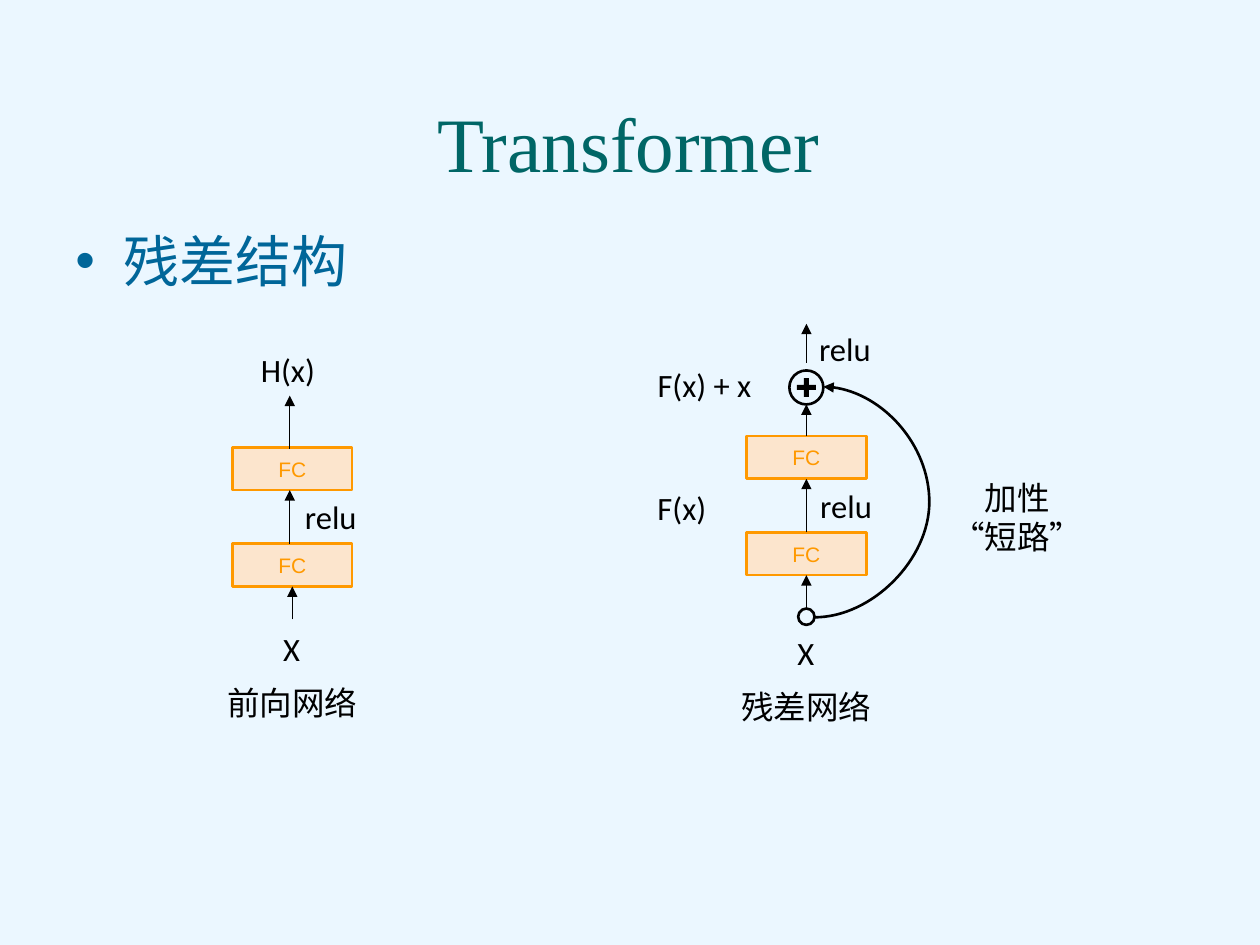
from dataclasses import dataclass

from lxml.etree import SubElement
from pptx import Presentation
from pptx.dml.color import RGBColor
from pptx.enum.shapes import MSO_CONNECTOR as Link, MSO_SHAPE as Shape
from pptx.enum.text import MSO_ANCHOR as Anchor, PP_ALIGN as Align
from pptx.oxml.ns import qn
from pptx.util import Inches, Pt

COLORS = {
    "page": "EBF7FF", "title": "006666", "topic": "006699",
    "ink": "000000", "layer": "FCE5CD", "accent": "FF9900",
}
UNIT = Inches(0.1)  # the page is a grid of 100 columns by 75 rows
LAYER_WIDTH, LAYER_HEIGHT, LAYER_STEP = 9.5, 3.4, 7.65


@dataclass
class Box:
    """A region of the page, in grid columns and rows."""
    left: float
    top: float
    width: float
    height: float

    def inner(self, left, top, width, height):
        return Box(self.left + left, self.top + top, width, height)

    def point(self, column, row):
        return self.left + column, self.top + row

    def lengths(self):
        return [grid(value) for value in (self.left, self.top, self.width, self.height)]


def grid(value):
    return round(value * UNIT)


def color(name):
    return RGBColor.from_string(COLORS[name])


def write(para, text, size, font, ink, align=None):
    para.alignment = align
    span = para.add_run()
    span.text = text
    span.font.size, span.font.name = Pt(size), font
    span.font.color.rgb = color(ink)


def set_frame(frame, anchor, inset=0.1):
    frame.word_wrap = True
    frame.vertical_anchor = anchor
    frame.margin_left = frame.margin_right = Inches(inset)
    frame.margin_top = frame.margin_bottom = Inches(inset)


def add_label(page, box, *lines, anchor=Anchor.TOP, align=Align.CENTER):
    frame = page.shapes.add_textbox(*box.lengths()).text_frame
    set_frame(frame, anchor)
    for index, line in enumerate(lines):
        para = frame.add_paragraph() if index else frame.paragraphs[0]
        write(para, line, 18.6, "Calibri", "ink", align)


def add_figure(shapes, kind, box, fill=None, line=None):
    figure = shapes.add_shape(kind, *box.lengths())
    figure.shadow.inherit = False
    if fill:
        figure.fill.solid()
        figure.fill.fore_color.rgb = color(fill)
    else:
        figure.fill.background()
    if line:
        figure.line.color.rgb = color(line)
        figure.line.width = Pt(1.5)
    else:
        figure.line.fill.background()
    return figure


def add_layer(page, box):
    layer = add_figure(page.shapes, Shape.RECTANGLE, box, "layer", "accent")
    set_frame(layer.text_frame, Anchor.MIDDLE)
    write(layer.text_frame.paragraphs[0], "FC", 12, "Arial", "accent", Align.CENTER)


def add_arrow(page, start, end, kind=Link.STRAIGHT, weight=0.75):
    arrow = page.shapes.add_connector(kind, *map(grid, (*start, *end)))
    arrow.line.color.rgb = color("ink")
    arrow.line.width = Pt(weight)
    properties = arrow._element.spPr
    SubElement(properties.find(qn("a:ln")), qn("a:tailEnd"), type="triangle")
    SubElement(properties, qn("a:effectLst"))
    return arrow


def add_up_arrow(page, box, column, start, end):
    add_arrow(page, box.point(column, start), box.point(column, end))


def add_layer_pair(page, box, axis, relu_left, input_top, caption, inner_axis):
    """Two stacked layers with their input, activation and caption."""
    left = axis - LAYER_WIDTH / 2
    for row in (LAYER_STEP, 0):
        add_layer(page, box.inner(left, row, LAYER_WIDTH, LAYER_HEIGHT))
    add_up_arrow(page, box, inner_axis, LAYER_STEP, LAYER_HEIGHT)
    add_up_arrow(page, box, axis, LAYER_STEP + 6, LAYER_STEP + LAYER_HEIGHT)
    add_label(page, box.inner(relu_left, 4.05, 7.1, 2.9), "relu", anchor=Anchor.MIDDLE)
    add_label(page, box.inner(axis - 4.4, input_top, 8.7, 4.3), "X")
    add_label(page, box.inner(axis - 9, input_top + 4.9, 18, 3.9), caption,
              anchor=Anchor.MIDDLE)


def add_feed_forward(page, box):
    layers = box.inner(0, 8.7, box.width, box.height - 8.7)
    add_layer_pair(page, layers, 8.2, 7.7, 13.4, "前向网络", 8)
    add_up_arrow(page, box, 8, 8.8, 4.6)
    add_label(page, box.inner(3.5, 0, 8.7, 4.3), "H(x)")


def add_sum_node(page, box):
    group = page.shapes.add_group_shape()
    add_figure(group.shapes, Shape.OVAL, box, line="ink")
    plus = add_figure(group.shapes, Shape.CROSS, box.inner(0.6, 0.6, 1.5, 1.5), "ink")
    plus.adjustments[0] = 0.37


def add_shortcut(page, start, end, bulge):
    """Curve from start to end, reaching bulge columns to the right."""
    curve = add_arrow(page, start, end, Link.CURVE, 1.5)
    guides = curve._element.spPr.find(qn("a:prstGeom")).get_or_add_avLst()
    share = round(bulge / (end[0] - start[0]) * 100000)
    SubElement(guides, qn("a:gd"), name="adj1", fmla=f"val {share}")


def add_residual(page, box):
    axis = 12.8
    layers = box.inner(0, 8.9, box.width, box.height - 8.9)
    add_layer_pair(page, layers, axis, 12.4, 14.6, "残差网络", axis)
    add_up_arrow(page, box, axis, 8.9, 6.4)
    add_up_arrow(page, box, axis, 3.1, 0)
    add_sum_node(page, box.inner(axis - 1.35, 3.7, 2.7, 2.7))
    add_figure(page.shapes, Shape.OVAL, box.inner(axis - 0.65, 22.6, 1.3, 1.3), line="ink")
    add_shortcut(page, box.point(axis + 0.65, 23.3), box.point(axis + 1.35, 5), 9.1)
    add_label(page, box.inner(12.3, 0.5, 7.1, 2.9), "relu", anchor=Anchor.MIDDLE)
    add_label(page, box.inner(0, 2.3, 10.1, 4), "F(x) + x", align=Align.LEFT)
    add_label(page, box.inner(0, 12, 7.3, 5.6), "F(x)", align=Align.LEFT)
    add_label(page, box.inner(22.7, 11.2, 13.7, 8), "加性", "“短路”")


def add_title(page, box):
    title = page.shapes.title
    title.left, title.top, title.width, title.height = box.lengths()
    title.text_frame.vertical_anchor = Anchor.BOTTOM
    para = title.text_frame.paragraphs[0]
    para.line_spacing = 0.9
    write(para, "Transformer", 44, "Times New Roman", "title", Align.CENTER)


def add_topic(page, box):
    frame = page.shapes.add_textbox(*box.lengths()).text_frame
    frame.word_wrap = True
    para = frame.paragraphs[0]
    properties = para._p.get_or_add_pPr()
    indent = Inches(0.38)
    properties.set("marL", str(indent))
    properties.set("indent", str(-indent))
    SubElement(properties, qn("a:buFont"), typeface="Arial")
    SubElement(properties, qn("a:buChar"), char="•")
    write(para, "残差结构", 32, "Times New Roman", "topic")


def main():
    deck = Presentation()
    deck.slide_width, deck.slide_height = grid(100), grid(75)
    page = deck.slides.add_slide(deck.slide_layouts[5])
    page.background.fill.solid()
    page.background.fill.fore_color.rgb = color("page")
    add_title(page, Box(4.8, 1.1, 90.2, 14.4))
    add_topic(page, Box(5, 17.5, 90, 48.7))
    add_feed_forward(page, Box(15, 26.8, 18, 31))
    add_residual(page, Box(51.2, 25.7, 36.4, 33))
    deck.save("out.pptx")


if __name__ == "__main__":
    main()
